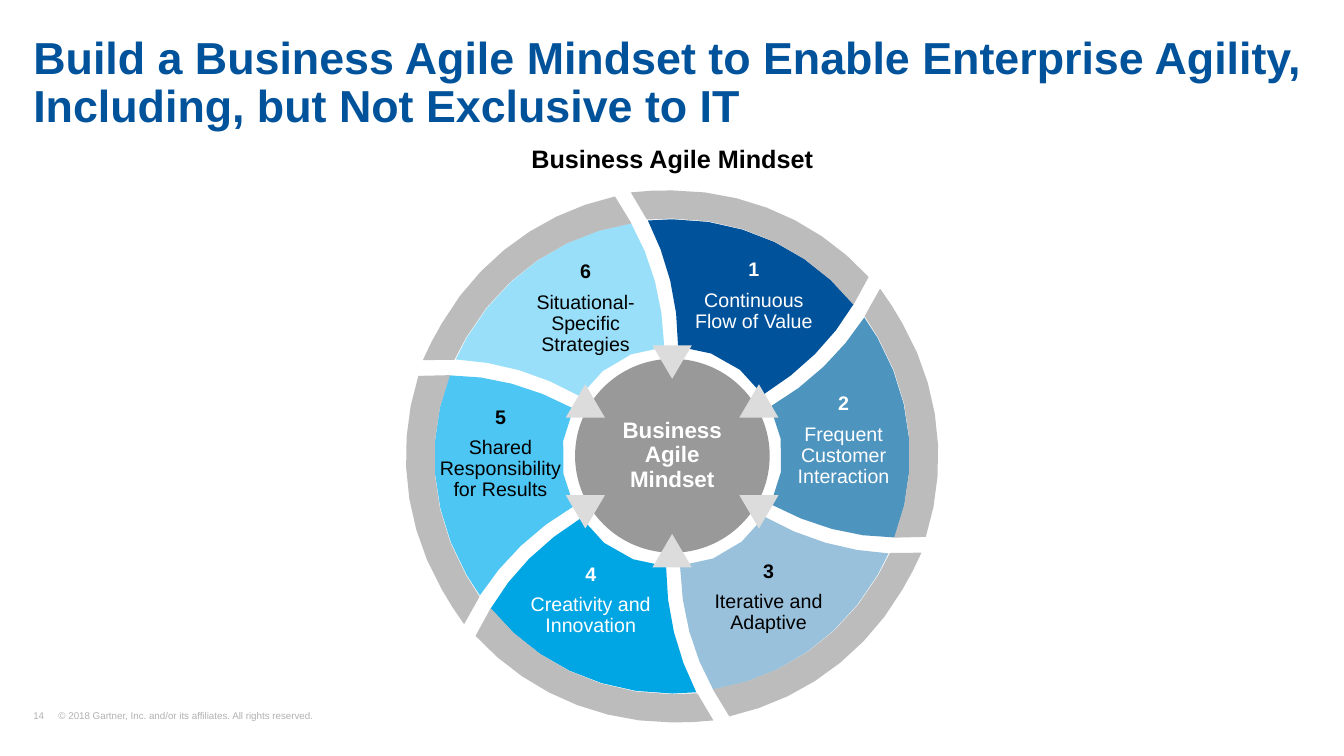
from dataclasses import dataclass
from math import ceil, cos, dist, radians, sin

from lxml import etree
from pptx import Presentation
from pptx.dml.color import RGBColor
from pptx.enum.shapes import MSO_SHAPE
from pptx.enum.text import MSO_ANCHOR, MSO_AUTO_SIZE, PP_ALIGN
from pptx.oxml.ns import qn
from pptx.util import Pt

OVAL = MSO_SHAPE.OVAL
TRIANGLE = MSO_SHAPE.ISOSCELES_TRIANGLE
TOP, BOTTOM = MSO_ANCHOR.TOP, MSO_ANCHOR.BOTTOM
LEFT, CENTER = PP_ALIGN.LEFT, PP_ALIGN.CENTER
FIXED = MSO_AUTO_SIZE.NONE


@dataclass(frozen=True)
class Theme:
    """Font, colours and type sizes of the slide."""
    font: str = "Arial"
    navy: str = "00529B"
    black: str = "000000"
    white: str = "FFFFFF"
    footer: str = "B2B2B2"
    rim: str = "BCBCBC"
    hub: str = "999999"
    pointer: str = "DCDCDC"
    title_size: int = 32
    heading_size: int = 18
    hub_size: int = 16
    label_size: int = 14
    footer_size: int = 7


THEME = Theme()
HUB_X, HUB_Y = 480.1, 326
STEP_LENGTH = 24

SEGMENT = ((64.8, -43.9), (
    ((92.9, -61.2), (114.5, -82.8), (129.6, -108.7)),
    ((99.4, -146.2), (52.6, -169.4), (0, -169.4)),
    ((-5.8, -169.4), (-11.5, -169.2), (-17.3, -168.5)),
    ((-3.6, -141.8), (4.3, -110.9), (4.3, -78.5)),
    ((28.8, -77), (51.1, -64.8), (64.8, -43.9)),
))
RIM = ((0, -169.9), (
    ((52.6, -169.9), (99.4, -146.2), (129.6, -108.4)),
    ((133.2, -114.5), (137.5, -121.7), (140.4, -128.2)),
    ((105.8, -166.3), (55.4, -190), (0, -190)),
    ((-10, -190), (-19.4, -189.8), (-29.5, -188.6)),
    ((-25.9, -182.2), (-21.6, -175.7), (-18, -169.2)),
    ((-12.2, -169.9), (-5.8, -169.9), (0, -169.9)),
))

PRINCIPLES = (
    ("Continuous Flow of Value", THEME.navy, THEME.white, (493.9, 182.2, 89.3, 44)),
    ("Frequent Customer Interaction", "4D94BF", THEME.white, (562.3, 277.9, 80.6, 44)),
    ("Iterative and Adaptive", "99C1DB", THEME.black, (508.3, 397.4, 81.4, 33)),
    ("Creativity and\nInnovation", "00A5E3", THEME.white, (376, 399.6, 92, 34)),
    ("Shared Responsibility\nfor Results", "4DC6F4", THEME.black, (312.2, 287.3, 90.6, 44)),
    ("Situational-Specific Strategies", "99DFF9", THEME.black, (376.6, 183.6, 83.5, 69)),
)


def trace(outline):
    """Return points along a closed outline of cubic curves, fewer on short ones."""
    start, curves = outline
    points = [start]
    for first, second, end in curves:
        steps = ceil(dist(start, end) / STEP_LENGTH)
        for step in range(1, steps + 1):
            t = step / steps
            weights = ((1 - t) ** 3, 3 * t * (1 - t) ** 2, 3 * t * t * (1 - t), t ** 3)
            corners = (start, first, second, end)
            points.append(tuple(
                sum(weight * corner[axis] for weight, corner in zip(weights, corners))
                for axis in (0, 1)))
        start = end
    return points[:-1]


def paint(shape, color):
    """Give a shape a flat fill without line or shadow."""
    shape.shadow.inherit = False
    shape.fill.solid()
    shape.fill.fore_color.rgb = RGBColor.from_string(color)
    shape.line.fill.background()


def add_blade(page, outline, angle, color):
    """Draw an outline turned around the hub."""
    turn_x, turn_y = cos(radians(angle)), sin(radians(angle))
    points = [(Pt(HUB_X + x * turn_x - y * turn_y), Pt(HUB_Y + x * turn_y + y * turn_x))
              for x, y in trace(outline)]
    builder = page.shapes.build_freeform(*points[0])
    builder.add_line_segments(points[1:], close=True)
    paint(builder.convert_to_shape(), color)


def add_preset(page, kind, center, size, color):
    """Draw a preset shape around a center given relative to the hub."""
    width, height = size
    left, top = HUB_X + center[0] - width / 2, HUB_Y + center[1] - height / 2
    shape = page.shapes.add_shape(kind, Pt(left), Pt(top), Pt(width), Pt(height))
    paint(shape, color)
    return shape


def place(box, area):
    """Move a box to its left, top, width and height."""
    box.left, box.top, box.width, box.height = map(Pt, area)


def set_frame(box, insets, anchor=TOP):
    """Set insets, anchor and wrapping, and return the text frame."""
    frame = box.text_frame
    frame.auto_size = FIXED
    frame.word_wrap = True
    frame.vertical_anchor = anchor
    frame.margin_left, frame.margin_top, frame.margin_right, frame.margin_bottom = map(Pt, insets)
    return frame


def write(para, text, size, color, bold=False, align=CENTER, before=0, after=0):
    """Format a paragraph and add its lines run by run."""
    para.alignment = align
    para.line_spacing = 0.9
    para.space_before, para.space_after = Pt(before), Pt(after)
    for index, line in enumerate(text.split("\n")):
        if index:
            para.add_line_break()
        span = para.add_run()
        span.text = line
        span.font.name = THEME.font
        span.font.size = Pt(size)
        span.font.bold = bold
        span.font.color.rgb = RGBColor.from_string(color)


def add_text(page, area, insets, anchor=TOP):
    """Add a text box and return its text frame."""
    return set_frame(page.shapes.add_textbox(*map(Pt, area)), insets, anchor)


def add_title(page, text):
    """Fill the title placeholder."""
    box = page.shapes.title
    place(box, (23.8, 18, 911.5, 77))
    frame = set_frame(box, (0, 7.2, 0, 0))
    write(frame.paragraphs[0], text, THEME.title_size, THEME.navy, True, LEFT)


def add_label(page, number, name, color, area):
    """Write a numbered principle on its segment."""
    frame = add_text(page, area, (0, 3.6, 0, 3.6))
    write(frame.paragraphs[0], str(number), THEME.label_size, color, True, after=1.6)
    write(frame.add_paragraph(), name, THEME.label_size, color, before=4.8)


def add_footer(page, text):
    """Write the page number and copyright line with a tab between them."""
    para = add_text(page, (23.8, 507.6, 232.6, 8), (0, 0, 0, 0), BOTTOM).paragraphs[0]
    tabs = etree.SubElement(para._p.get_or_add_pPr(), qn("a:tabLst"))
    etree.SubElement(tabs, qn("a:tab"), pos=str(Pt(18)), algn="l")
    write(para, text, THEME.footer_size, THEME.footer, align=LEFT)


def add_pointers(page):
    """Set six triangles around the hub."""
    for side in (-1, 0, 1):
        for level in (-1, 1):
            center = (62 * side, level * (39.6 if side else 67.3))
            pointer = add_preset(page, TRIANGLE, center, (28, 23.8), THEME.pointer)
            points_up = (side != 0) == (level < 0)
            pointer.rotation = 0 if points_up else 180


def main():
    """Build the slide and save it."""
    deck = Presentation()
    deck.slide_width, deck.slide_height = Pt(960), Pt(540)
    page = deck.slides.add_slide(deck.slide_layouts[5])
    add_footer(page, "14\t© 2018 Gartner, Inc. and/or its affiliates. All rights reserved.")
    add_title(page, "Build a Business Agile Mindset to Enable Enterprise Agility, "
                    "Including, but Not Exclusive to IT")
    heading = add_text(page, (272.9, 97.9, 414.7, 30), (7.2, 7.2, 7.2, 3.6))
    write(heading.paragraphs[0], "Business Agile Mindset", THEME.heading_size, THEME.black, True)
    for index, (_, fill, _, _) in enumerate(PRINCIPLES):
        add_blade(page, SEGMENT, 60 * index, fill)
        add_blade(page, RIM, 60 * index, THEME.rim)
    add_preset(page, OVAL, (0.2, -0.4), (139, 138.5), THEME.hub)
    hub = add_text(page, (437, 296, 86.4, 60), (0, 3.6, 0, 3.6))
    write(hub.paragraphs[0], "Business\nAgile\nMindset", THEME.hub_size, THEME.white, True)
    for number, (name, _, color, area) in enumerate(PRINCIPLES, 1):
        add_label(page, number, name, color, area)
    add_pointers(page)
    deck.save("out.pptx")


if __name__ == "__main__":
    main()
